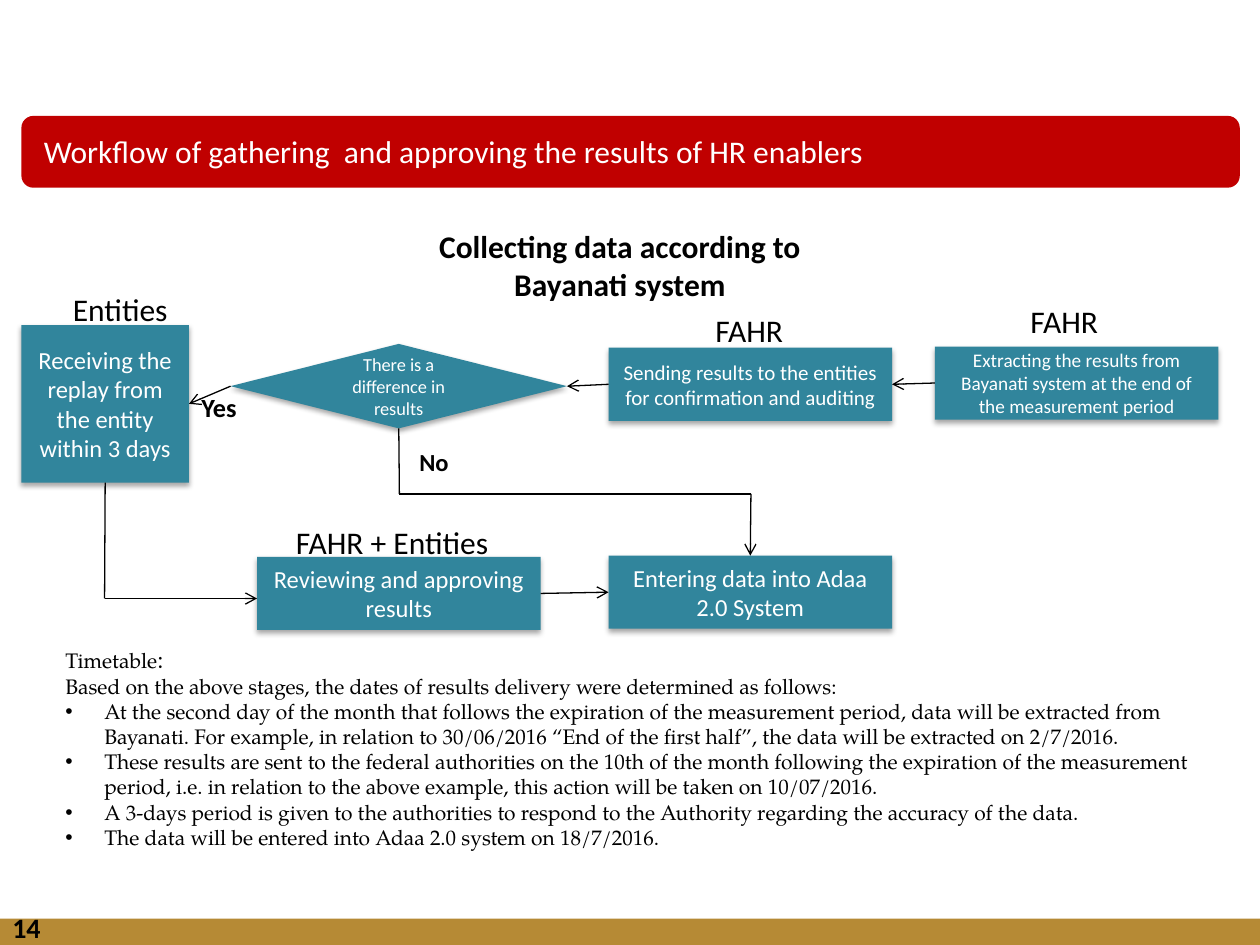
from lxml import etree
from pptx import Presentation
from pptx.dml.color import RGBColor
from pptx.enum.shapes import MSO_CONNECTOR, MSO_SHAPE
from pptx.enum.text import MSO_ANCHOR, PP_ALIGN
from pptx.oxml import parse_xml
from pptx.oxml.ns import nsdecls, qn
from pptx.util import Inches, Pt

TEAL = RGBColor(0x31, 0x85, 0x9C)
RED = RGBColor(0xC0, 0x00, 0x00)
GOLD = RGBColor(0xB6, 0x8A, 0x35)
WHITE = RGBColor(0xFF, 0xFF, 0xFF)
BLACK = RGBColor(0x00, 0x00, 0x00)
TOP, LEFT, BOTTOM, RIGHT = range(4)

presentation = Presentation()
presentation.slide_width, presentation.slide_height = Inches(10), Inches(7.5)
slide = presentation.slides.add_slide(presentation.slide_layouts[6])


def add_block(preset, left, top, width, height, color):
    shape = slide.shapes.add_shape(
        preset, Inches(left), Inches(top), Inches(width), Inches(height))
    shape.shadow.inherit = False
    shape.fill.solid()
    shape.fill.fore_color.rgb = color
    shape.line.fill.background()
    return shape


def set_text(shape, text, size, color=BLACK, bold=False, centered=False):
    """Write one paragraph of Calibri into the shape."""
    shape.text_frame.word_wrap = True
    paragraph = shape.text_frame.paragraphs[0]
    paragraph.text = text
    paragraph.alignment = PP_ALIGN.CENTER if centered else PP_ALIGN.LEFT
    font = paragraph.font
    font.name, font.size, font.bold = "Calibri", Pt(size), bold
    font.color.rgb = color


# Footer and title bars
add_block(MSO_SHAPE.RECTANGLE, 0, 7.29, 10, 0.21, GOLD)
add_block(MSO_SHAPE.ROUNDED_RECTANGLE, 0.17, 0.92, 9.67, 0.57, RED)

# Workflow steps
RECT, DIAMOND = MSO_SHAPE.RECTANGLE, MSO_SHAPE.DIAMOND
steps = [
    ("extract", RECT, 7.42, 2.75, 2.25, 0.58, 11,
     "Extracting the results from Bayanati system at the end of the measurement period"),
    ("send", RECT, 4.83, 2.76, 2.25, 0.58, 12,
     "Sending results to the entities for confirmation and auditing"),
    ("difference", DIAMOND, 1.83, 2.73, 2.67, 0.67, 10.5, "There is a difference in results"),
    ("receive", RECT, 0.17, 2.58, 1.33, 1.25, 14,
     "Receiving the replay from the entity within 3 days"),
    ("enter", RECT, 4.83, 4.41, 2.25, 0.58, 14, "Entering data into Adaa 2.0 System"),
    ("review", RECT, 2.04, 4.42, 2.25, 0.58, 14, "Reviewing and approving results"),
]
boxes = {}
for name, preset, left, top, width, height, size, text in steps:
    box = add_block(preset, left, top, width, height, TEAL)
    box.text_frame.vertical_anchor = MSO_ANCHOR.MIDDLE
    set_text(box, text, size, WHITE, centered=True)
    box._element.spPr.find(qn("a:effectLst")).append(parse_xml(
        f'<a:outerShdw {nsdecls("a")} blurRad="39370" dist="22860" dir="5400000" rotWithShape="0">'
        '<a:srgbClr val="000000"><a:alpha val="35000"/></a:srgbClr></a:outerShdw>'))
    boxes[name] = box

# Arrows: an end is either a (step, side) pair or an (x, y) point
links = [
    (("extract", LEFT), ("send", RIGHT), True),
    (("send", LEFT), ("difference", RIGHT), True),
    (("difference", LEFT), ("receive", RIGHT), True),
    (("difference", BOTTOM), (3.17, 3.92), False),
    ((3.17, 3.92), (5.96, 3.92), False),
    ((5.96, 3.92), ("enter", TOP), True),
    (("receive", BOTTOM), (0.83, 4.75), False),
    ((0.83, 4.75), (2.04, 4.75), True),
    (("review", RIGHT), ("enter", LEFT), True),
]
for start, end, has_arrowhead in links:
    start_joined, end_joined = start[0] in boxes, end[0] in boxes
    start_x, start_y = (0, 0) if start_joined else start
    end_x, end_y = (0, 0) if end_joined else end
    connector = slide.shapes.add_connector(
        MSO_CONNECTOR.STRAIGHT, Inches(start_x), Inches(start_y), Inches(end_x), Inches(end_y))
    if start_joined:
        connector.begin_connect(boxes[start[0]], start[1])
    if end_joined:
        connector.end_connect(boxes[end[0]], end[1])
    connector.line.color.rgb = BLACK
    connector.line.width = Pt(0.75)
    if has_arrowhead:
        etree.SubElement(connector.line._get_or_add_ln(), qn("a:tailEnd"), type="arrow")
    etree.SubElement(connector._element.spPr, qn("a:effectLst"))

# Labels
labels = [
    (0.25, 1, 7.25, 0.4, "Workflow of gathering  and approving the results of HR enablers",
     18, WHITE, False, False),
    (3.23, 3.5, 0.46, 0.34, "No", 14, BLACK, True, False),
    (1.5, 3.06, 0.58, 0.36, "Yes", 15, BLACK, True, False),
    (8.08, 2.35, 0.92, 0.4, "FAHR", 18, BLACK, False, False),
    (5.58, 2.42, 0.92, 0.4, "FAHR", 18, BLACK, False, False),
    (2.25, 4.1, 1.92, 0.4, "FAHR + Entities", 18, BLACK, False, False),
    (0.48, 2.25, 1.92, 0.4, "Entities", 18, BLACK, False, False),
    (3.17, 1.75, 3.5, 0.71, "Collecting data according to Bayanati system", 18, BLACK, True, True),
    (0, 7.18, 2.33, 0.4, "14", 16, BLACK, True, False),
]
for left, top, width, height, *text_style in labels:
    label = slide.shapes.add_textbox(Inches(left), Inches(top), Inches(width), Inches(height))
    set_text(label, *text_style)

# Timetable
timetable = slide.shapes.add_textbox(Inches(0.42), Inches(5.06), Inches(9.42), Inches(1.75))
frame = timetable.text_frame
frame.word_wrap = True
heading = frame.paragraphs[0]
heading.add_run().text = "Timetable"
colon = heading.add_run()
colon.text = ":"
colon.font.size = Pt(14)
frame.add_paragraph().text = (
    "Based on the above stages, the dates of results delivery were determined as follows:")
bullets = [
    "At the second day of the month that follows the expiration of the measurement period, "
    "data will be extracted from Bayanati. For example, in relation to 30/06/2016 "
    "“End of the first half”, the data will be extracted on 2/7/2016.",
    "These results are sent to the federal authorities on the 10th of the month following "
    "the expiration of the measurement period, i.e. in relation to the above example, "
    "this action will be taken on 10/07/2016.",
    "A 3-days period is given to the authorities to respond to the Authority regarding "
    "the accuracy of the data.",
    "The data will be entered into Adaa 2.0 system on 18/7/2016.",
]
for text in bullets:
    paragraph = frame.add_paragraph()
    paragraph.text = text
    properties = paragraph._p.get_or_add_pPr()
    properties.set("marL", str(Inches(0.31)))
    properties.set("indent", str(-Inches(0.31)))
    etree.SubElement(properties, qn("a:buFont"), typeface="Arial")
    etree.SubElement(properties, qn("a:buChar"), char="•")
for paragraph in frame.paragraphs:
    paragraph.font.name = "TeX Gyre Pagella"
    paragraph.font.size = Pt(12)
    paragraph.font.color.rgb = BLACK

presentation.save("out.pptx")
